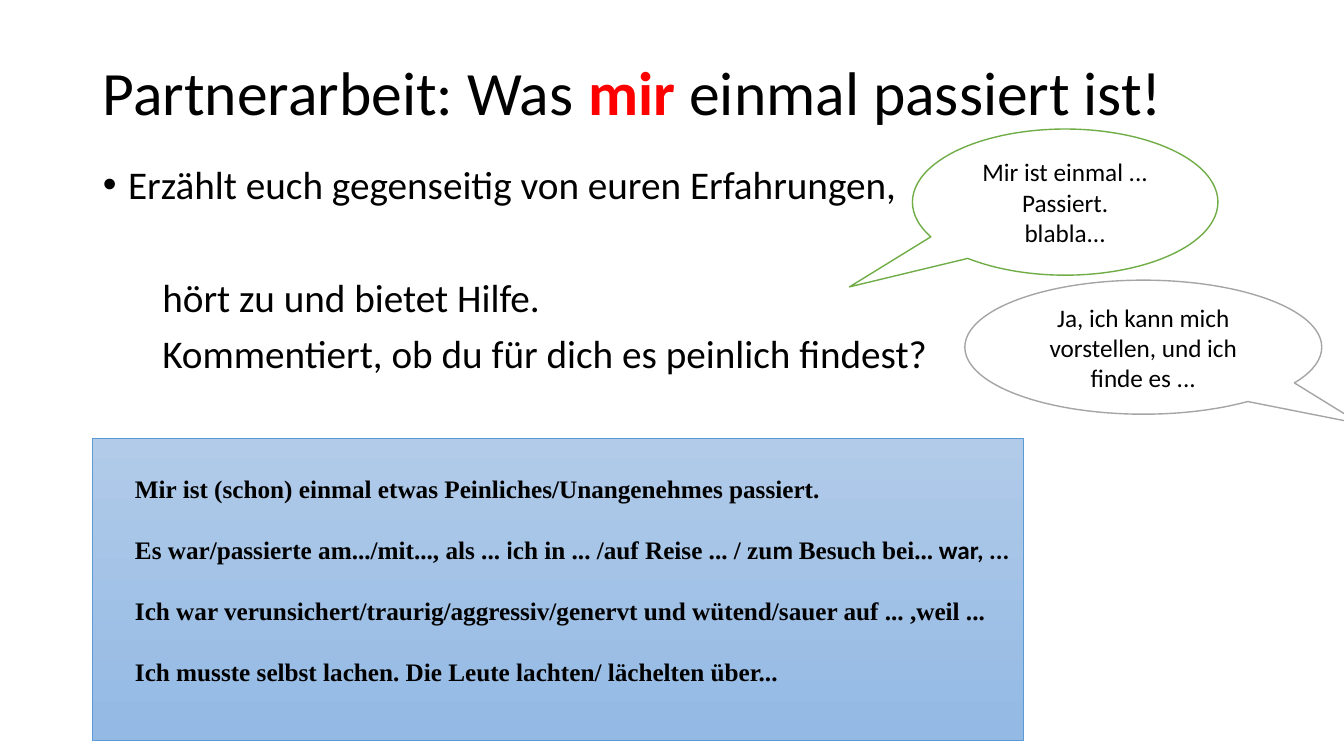
from lxml.etree import SubElement
from pptx import Presentation
from pptx.dml.color import RGBColor
from pptx.enum.shapes import MSO_SHAPE
from pptx.enum.text import MSO_ANCHOR, MSO_AUTO_SIZE, PP_ALIGN
from pptx.oxml.ns import qn
from pptx.util import Inches, Pt

BLACK = RGBColor(0x00, 0x00, 0x00)
WHITE = RGBColor(0xFF, 0xFF, 0xFF)
RED = RGBColor(0xFF, 0x00, 0x00)
GREEN = RGBColor(0x70, 0xAD, 0x47)
GRAY = RGBColor(0xA5, 0xA5, 0xA5)
BLUE = RGBColor(0x5B, 0x9B, 0xD5)
PANEL_TOP = RGBColor(0xB1, 0xCB, 0xE9)
PANEL_BOTTOM = RGBColor(0x93, 0xB9, 0xE4)

SANS = "Calibri"
SERIF = "Times New Roman"

PHRASES = [
    [("Mir ist (schon) einmal etwas Peinliches/Unangenehmes passiert.", SERIF)],
    [("Es war/passierte am.../mit..., als ... ", SERIF), ("i", SANS),
     ("ch in ... /auf Reise ... / zu", SERIF), ("m ", SANS),
     ("Besuch bei...", SERIF), (" war, ...", SANS)],
    [("Ich war verunsichert/traurig/aggressiv/genervt und wütend/sauer auf ... ,weil ...", SERIF)],
    [("Ich musste selbst lachen. Die Leute lachten/ lächelten über...", SERIF)],
]


def add_text(paragraph, text, size=18, font=SANS, color=BLACK, bold=False):
    run = paragraph.add_run()
    run.text = text
    run.font.size = Pt(size)
    run.font.name = font
    run.font.color.rgb = color
    run.font.bold = bold


def next_paragraph(frame, index):
    return frame.add_paragraph() if index else frame.paragraphs[0]


def place(shape, left, top, width, height):
    shape.left, shape.top = Inches(left), Inches(top)
    shape.width, shape.height = Inches(width), Inches(height)
    shape.text_frame.auto_size = MSO_AUTO_SIZE.NONE


def set_bullet(paragraph, character, margin, indent):
    properties = paragraph._p.get_or_add_pPr()
    properties.set("marL", str(Inches(margin)))
    properties.set("indent", str(Inches(indent)))
    if character:
        SubElement(properties, qn("a:buFont"), typeface="Arial")
        SubElement(properties, qn("a:buChar"), char=character)
    else:
        SubElement(properties, qn("a:buNone"))


def fill_title(title):
    place(title, 0.92, 0.4, 11.5, 1.09)
    title.text_frame.vertical_anchor = MSO_ANCHOR.MIDDLE
    paragraph = title.text_frame.paragraphs[0]
    paragraph.alignment = PP_ALIGN.LEFT
    paragraph.line_spacing = 0.9
    add_text(paragraph, "Partnerarbeit: Was ", size=44)
    add_text(paragraph, "mir ", size=44, color=RED, bold=True)
    add_text(paragraph, "einmal passiert ist!", size=44)


def fill_tasks(body):
    place(body, 0.92, 1.59, 11.5, 3.79)
    tasks = [
        ("Erzählt euch gegenseitig von euren Erfahrungen,", "•", 0.25, -0.25, 10),
        ("hört zu und bietet Hilfe.", None, 0, 0.59, 50.5),
        ("Kommentiert, ob du für dich es peinlich findest?", None, 0, 0.59, 10),
    ]
    for index, (text, bullet, margin, indent, gap) in enumerate(tasks):
        paragraph = next_paragraph(body.text_frame, index)
        paragraph.line_spacing = 0.9
        paragraph.space_before = Pt(gap)
        set_bullet(paragraph, bullet, margin, indent)
        add_text(paragraph, text, size=28)


def add_panel(slide):
    panel = slide.shapes.add_shape(MSO_SHAPE.ACTION_BUTTON_CUSTOM, Inches(0.92),
                                   Inches(4.35), Inches(9.23), Inches(3))
    panel.shadow.inherit = False
    panel.fill.gradient()
    panel.fill.gradient_angle = 270
    for stop, color in zip(panel.fill.gradient_stops, (PANEL_TOP, PANEL_BOTTOM)):
        stop.color.rgb = color
    panel.line.color.rgb = BLUE
    panel.line.width = Pt(0.5)


def add_phrases(slide):
    box = slide.shapes.add_textbox(Inches(1.24), Inches(4.65), Inches(9.15), Inches(2.22))
    box.text_frame.word_wrap = True
    for index, parts in enumerate(PHRASES):
        paragraph = next_paragraph(box.text_frame, index)
        paragraph.space_before = Pt(22 if index else 0)
        for text, font in parts:
            add_text(paragraph, text, font=font, bold=True)


def add_bubble(slide, left, top, width, height, tail, color, lines):
    bubble = slide.shapes.add_shape(MSO_SHAPE.OVAL_CALLOUT, Inches(left), Inches(top),
                                    Inches(width), Inches(height))
    bubble.adjustments[0], bubble.adjustments[1] = tail
    bubble.shadow.inherit = False
    bubble.fill.solid()
    bubble.fill.fore_color.rgb = WHITE
    bubble.line.color.rgb = color
    bubble.line.width = Pt(1)
    frame = bubble.text_frame
    frame.word_wrap = True
    frame.vertical_anchor = MSO_ANCHOR.MIDDLE
    for index, line in enumerate(lines):
        paragraph = next_paragraph(frame, index)
        paragraph.alignment = PP_ALIGN.CENTER
        add_text(paragraph, line)


def main():
    presentation = Presentation()
    presentation.slide_width = Inches(13.33)
    presentation.slide_height = Inches(7.5)
    slide = presentation.slides.add_slide(presentation.slide_layouts[1])

    # Title and tasks
    fill_title(slide.shapes.title)
    fill_tasks(slide.placeholders[1])

    # Panel with useful phrases
    add_panel(slide)
    add_phrases(slide)

    # Speech bubbles
    add_bubble(slide, 9.05, 1.28, 3.03, 1.45, (-0.706, 0.58), GREEN,
               ["Mir ist einmal ... Passiert.", "blabla..."])
    add_bubble(slide, 9.57, 2.78, 3.54, 1.33, (0.609, 0.572), GRAY,
               ["Ja, ich kann mich vorstellen, und ich finde es ..."])

    presentation.save("out.pptx")


if __name__ == "__main__":
    main()
